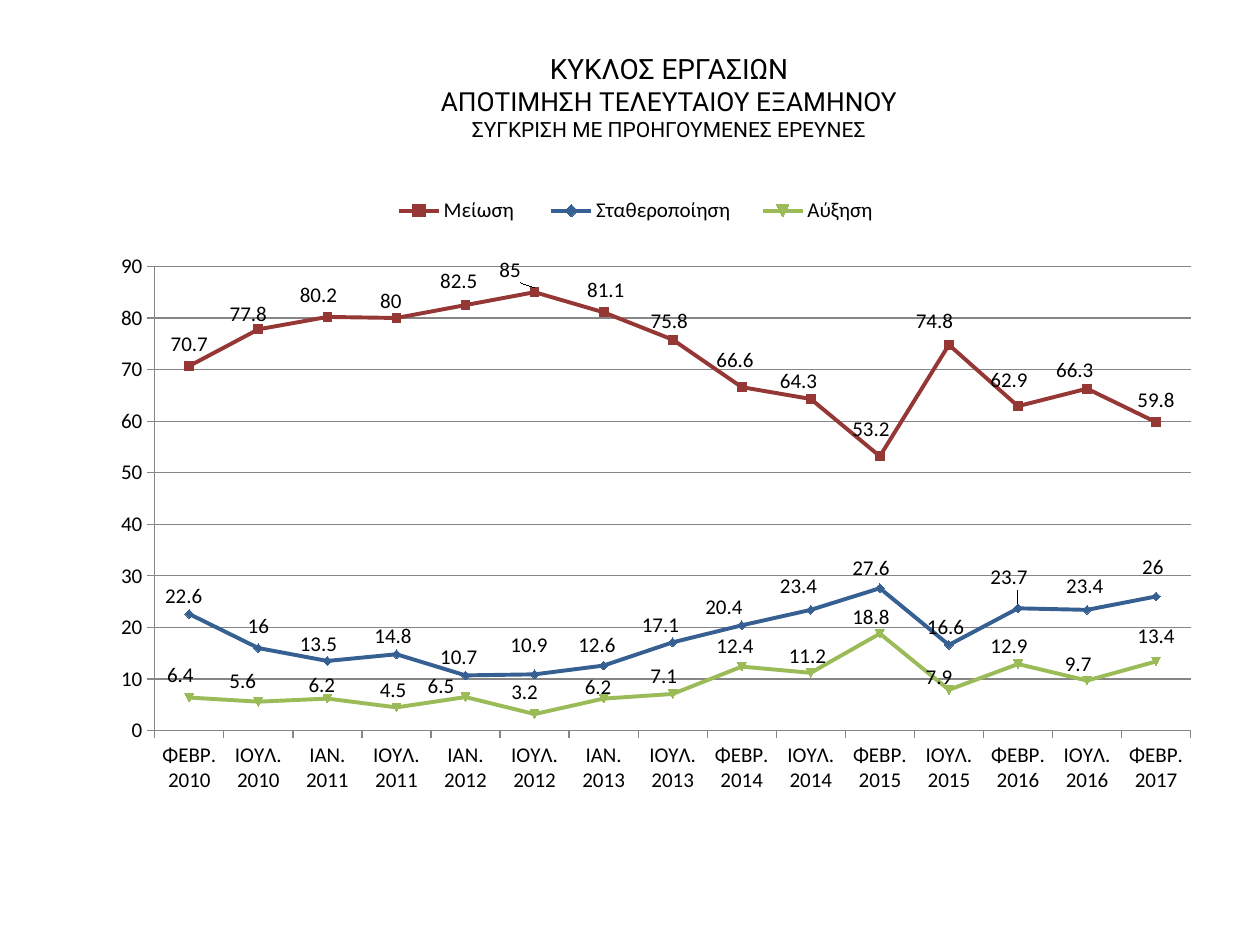
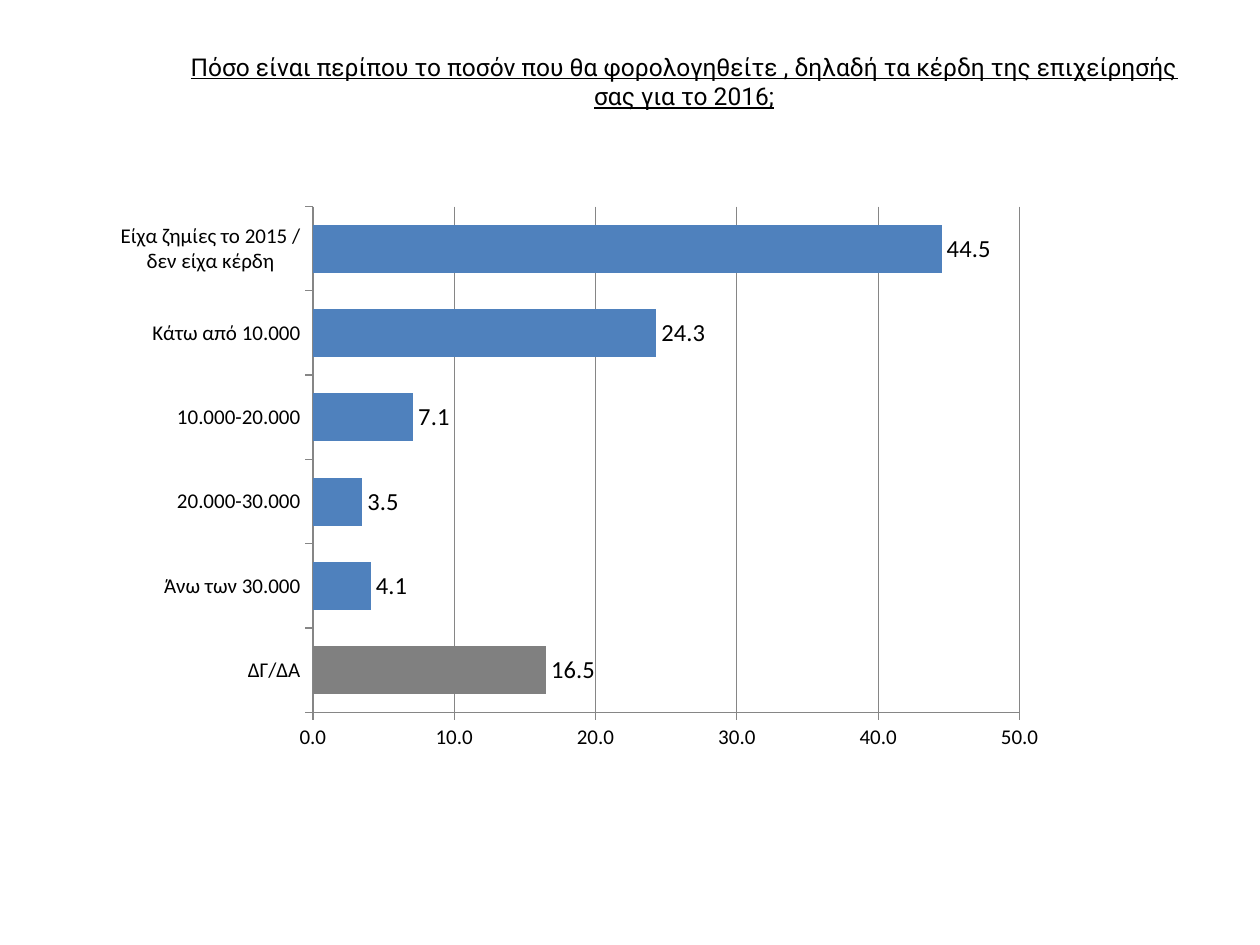
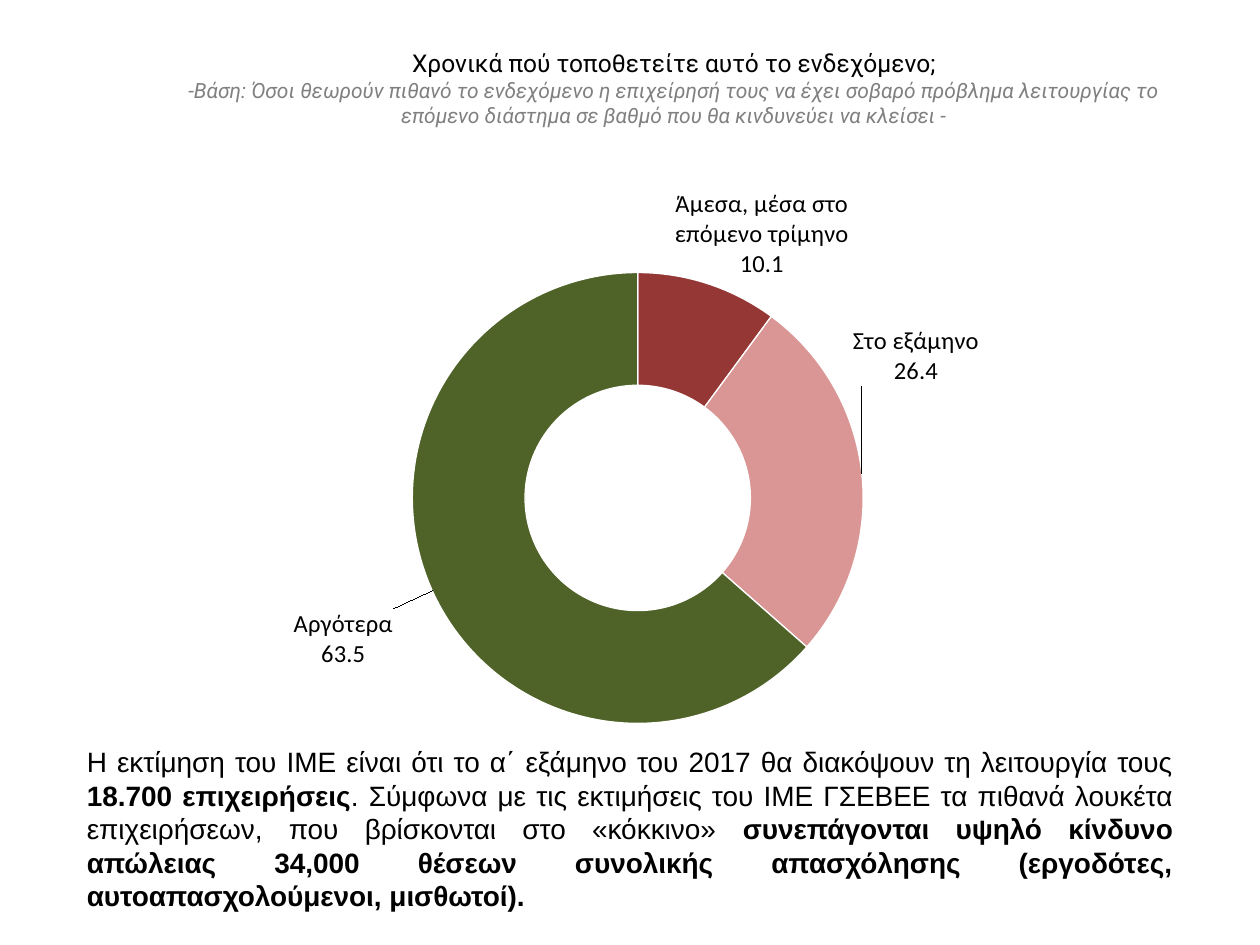
from lxml import etree
from pptx import Presentation
from pptx.chart.data import CategoryChartData
from pptx.dml.color import RGBColor
from pptx.enum.chart import XL_CHART_TYPE, XL_LABEL_POSITION, XL_LEGEND_POSITION, XL_TICK_MARK
from pptx.enum.text import MSO_ANCHOR, MSO_AUTO_SIZE, PP_ALIGN
from pptx.oxml.ns import qn
from pptx.util import Inches, Pt

LINE, BAR, RING = XL_CHART_TYPE.LINE_MARKERS, XL_CHART_TYPE.BAR_CLUSTERED, XL_CHART_TYPE.DOUGHNUT
ABOVE, OUTSIDE = XL_LABEL_POSITION.ABOVE, XL_LABEL_POSITION.OUTSIDE_END
RIGHT, TICK_OUT = XL_LEGEND_POSITION.RIGHT, XL_TICK_MARK.OUTSIDE
CENTER, JUSTIFY = PP_ALIGN.CENTER, PP_ALIGN.JUSTIFY
TOP, NO_FIT, GROW = MSO_ANCHOR.TOP, MSO_AUTO_SIZE.NONE, MSO_AUTO_SIZE.SHAPE_TO_FIT_TEXT

BLACK = RGBColor(0x00, 0x00, 0x00)
WHITE = RGBColor(0xFF, 0xFF, 0xFF)
GRAY = RGBColor(0x80, 0x80, 0x80)
RULE = RGBColor(0x86, 0x86, 0x86)
RED = RGBColor(0x95, 0x37, 0x35)
PINK = RGBColor(0xD9, 0x96, 0x94)
NAVY = RGBColor(0x37, 0x60, 0x92)
BLUE = RGBColor(0x4F, 0x81, 0xBD)
LIME = RGBColor(0x9B, 0xBB, 0x59)
OLIVE = RGBColor(0x4F, 0x62, 0x28)


def style(font, name, size, color=BLACK):
    font.name, font.size, font.color.rgb = name, Pt(size), color


def set_layout(parent, index, **parts):
    """Give a chart part a manual layout, in fractions of the chart."""
    for old in parent.findall(qn("c:layout")):
        parent.remove(old)
    layout = etree.Element(qn("c:layout"))
    manual = etree.SubElement(layout, qn("c:manualLayout"))
    for tag, value in parts.items():
        etree.SubElement(manual, qn("c:" + tag)).set("val", str(value))
    parent.insert(index, layout)


# Titles: box, top margin, lines of (text, size, colour)
TITLES = [
    ((1.25, 0.36, 8.12, 0.54), 0.05, [
        ("ΚΥΚΛΟΣ ΕΡΓΑΣΙΩΝ", 16, BLACK),
        ("ΑΠΟΤΙΜΗΣΗ ΤΕΛΕΥΤΑΙΟΥ ΕΞΑΜΗΝΟΥ", 15, BLACK),
        ("ΣΥΓΚΡΙΣΗ ΜΕ ΠΡΟΗΓΟΥΜΕΝΕΣ ΕΡΕΥΝΕΣ", 12, BLACK)]),
    ((1.25, 0.36, 8.36, 0.51), 0.05, [
        ("Πόσο είναι περίπου το ποσόν που θα φορολογηθείτε , δηλαδή τα κέρδη "
         "της επιχείρησής σας για το 2016;", 14, BLACK)]),
    ((1.25, 0.08, 8.2, 0.76), 0.3, [
        ("Χρονικά πού τοποθετείτε αυτό το ενδεχόμενο;", 14, BLACK),
        ("-Βάση: Όσοι θεωρούν πιθανό το ενδεχόμενο η επιχείρησή τους να έχει σοβαρό "
         "πρόβλημα λειτουργίας το επόμενο διάστημα σε βαθμό που θα κινδυνεύει να "
         "κλείσει -", 12, GRAY)]),
]

# Charts: kind, box, categories, series
MONTHS = ["ΦΕΒΡ. 2010", "ΙΟΥΛ. 2010", "ΙΑΝ. 2011", "ΙΟΥΛ. 2011", "ΙΑΝ. 2012",
          "ΙΟΥΛ. 2012", "ΙΑΝ. 2013", "ΙΟΥΛ. 2013", "ΦΕΒΡ. 2014", "ΙΟΥΛ. 2014",
          "ΦΕΒΡ. 2015", "ΙΟΥΛ. 2015", "ΦΕΒΡ. 2016", "ΙΟΥΛ. 2016", "ΦΕΒΡ. 2017"]
CHARTS = [
    (LINE, (0.75, 1.47, 8.86, 5.04), MONTHS, {
        "Μείωση ": [70.7, 77.8, 80.2, 80, 82.5, 85, 81.1, 75.8, 66.6, 64.3, 53.2,
                    74.8, 62.9, 66.3, 59.8],
        "Σταθεροποίηση": [22.6, 16, 13.5, 14.8, 10.7, 10.9, 12.6, 17.1, 20.4, 23.4,
                          27.6, 16.6, 23.7, 23.4, 26],
        "Αύξηση": [6.4, 5.6, 6.2, 4.5, 6.5, 3.2, 6.2, 7.1, 12.4, 11.2, 18.8, 7.9,
                   12.9, 9.7, 13.4]}),
    (BAR, (0.91, 1.55, 7.48, 4.49),
     ["ΔΓ/ΔΑ", "Άνω των 30.000", "20.000-30.000", "10.000-20.000", "Κάτω από 10.000",
      "Είχα ζημίες το 2015 / δεν είχα κέρδη"],
     {"Series 1": [16.5, 4.1, 3.5, 7.1, 24.3, 44.5]}),
    (RING, (1.69, 1.44, 6.67, 4.44),
     ["Άμεσα, μέσα στο επόμενο τρίμηνο", "Στο εξάμηνο", "Αργότερα"],
     {"Series 1": [10.1, 26.4, 63.5]}),
]

# Label shifts from the default place, in points, one list per series
LINE_SHIFTS = [
    [(0, 0), (-6, 4), (-5, 0), (-3, 3), (-4, -1), (-14, 0), (1, 0), (-2, 2),
     (-4, -3), (-7, 2), (-5, -3), (-8, -1), (-5, -2), (-7, 2), (0, 0)],
    [(-3, 2), (0, 0), (-5, 3), (-2, 2), (-4, 2), (-3, -4), (-4, 1), (-7, 3),
     (-10, 2), (-7, -1), (-5, 1), (-2, 2), (-5, -5), (-1, -1), (-2, -4)],
    [(-5, 0), (-9, 1), (-3, 5), (-2, 3), (-14, 6), (-6, 0), (-3, 6), (-5, 2),
     (-4, 1), (-2, 3), (-5, 3), (-6, 5), (-5, 2), (-5, 3), (0, -2)],
]
RING_SHIFTS = [[(41, -59), (63, -71), (-80, 41)]]

prs = Presentation()
prs.slide_width, prs.slide_height = Inches(10), Inches(7.5)
slides, charts = [], []

# Shared build: title, chart, axes
for (box, margin, lines), (kind, frame, cats, rows) in zip(TITLES, CHARTS):
    slide = prs.slides.add_slide(prs.slide_layouts[5])
    title = slide.shapes.title
    title.left, title.top, title.width, title.height = map(Inches, box)
    text = title.text_frame
    text.text = "\n".join(line[0] for line in lines)
    text.auto_size, text.vertical_anchor = NO_FIT, TOP
    text.margin_top = Inches(margin)
    for para, (_, size, color) in zip(text.paragraphs, lines):
        para.alignment = CENTER
        style(para.runs[0].font, "Roboto", size, color)

    data = CategoryChartData()
    data.categories = cats
    for name, values in rows.items():
        data.add_series(name, values)
    chart = slide.shapes.add_chart(kind, *map(Inches, frame), data).chart
    chart.has_title = chart.has_legend = False
    style(chart.font, "Vollkorn", 18)
    if kind != RING:
        for axis in (chart.category_axis, chart.value_axis):
            axis.major_tick_mark = TICK_OUT
            axis.format.line.color.rgb = RULE
            style(axis.tick_labels.font, "Calibri", 12)
        scale = chart.value_axis
        scale.minimum_scale, scale.major_unit = 0, 10
        scale.has_major_gridlines = True
        scale.major_gridlines.format.line.color.rgb = RULE
    slides.append(slide)
    charts.append(chart)

trend, profit, timing = charts

# Slide 1: lines and legend
trend.value_axis.maximum_scale = 90
set_layout(trend._chartSpace.chart.plotArea, 0, layoutTarget="inner", xMode="edge",
           yMode="edge", x=0.054, y=0.128, w=0.928, h=0.731)
trend.has_legend = True
trend.legend.position = RIGHT
trend.legend.include_in_layout = False
style(trend.legend.font, "Calibri", 12)
set_layout(trend.legend._element, 1, xMode="edge", yMode="edge",
           x=0.25, y=0.01, w=0.47, h=0.06)
for series, color in zip(trend.plots[0].series, (RED, NAVY, LIME)):
    series.smooth = False
    series.format.line.color.rgb = color
    series.format.line.width = Pt(2.25)
    series.marker.size = 5
    series.marker.format.fill.solid()
    series.marker.format.fill.fore_color.rgb = color
    series.marker.format.line.color.rgb = color

# Slide 2: bars
profit.value_axis.maximum_scale = 50
profit.value_axis.tick_labels.number_format = "0.0"
profit.value_axis.tick_labels.number_format_is_linked = False
bars = profit.plots[0]
bars.gap_width, bars.vary_by_categories = 75, False
fill = bars.series[0].format.fill
fill.solid()
fill.fore_color.rgb = BLUE
fill = bars.series[0].points[0].format.fill
fill.solid()
fill.fore_color.rgb = GRAY
labels = bars.series[0].data_labels
labels.show_value, labels.position = True, OUTSIDE
labels.number_format, labels.number_format_is_linked = "0.0", False
style(labels.font, "Calibri", 14)
for run in slides[1].shapes.title.text_frame.paragraphs[0].runs:
    run.font.underline = True

# Slide 3: ring
set_layout(timing._chartSpace.chart.plotArea, 0, layoutTarget="inner", xMode="edge",
           yMode="edge", x=0.237, y=0.163, w=0.537, h=0.806)
for i, color in enumerate((RED, PINK, OLIVE)):
    look = timing.plots[0].series[0].points[i].format
    look.fill.solid()
    look.fill.fore_color.rgb = color
    look.line.color.rgb = WHITE
    look.line.width = Pt(0.75)
slides[2].shapes.title.text_frame.paragraphs[1].runs[0].font.italic = True

# Shifted labels of the lines and the ring
for chart, frame, shifts, size in ((trend, CHARTS[0][1], LINE_SHIFTS, 12),
                                   (timing, CHARTS[2][1], RING_SHIFTS, 14)):
    for series, row in zip(chart.plots[0].series, shifts):
        labels = series.data_labels
        labels.show_value = True
        labels.show_category_name = chart is timing
        style(labels.font, "Calibri", size)
        for i in range(len(row)):
            label = series.points[i].data_label
            style(label.font, "Calibri", size)
            if chart is trend:
                label.position = ABOVE
        for node, (dx, dy) in zip(series._element.xpath("c:dLbls/c:dLbl"), row):
            set_layout(node, 1, x=round(dx / 72 / frame[2], 3),
                       y=round(dy / 72 / frame[3], 3))
            if chart is timing:
                node.find(qn("c:showCatName")).set("val", "1")
                node.find(qn("c:showPercent")).set("val", "0")
                etree.SubElement(node, qn("c:separator")).text = "\n"

# Slide 3: closing text
note = slides[2].shapes.add_textbox(Inches(0.59), Inches(5.86), Inches(8.82), Inches(1.45))
note.text_frame.word_wrap = True
note.text_frame.auto_size = GROW
para = note.text_frame.paragraphs[0]
para.alignment = JUSTIFY
for words, bold in (
        ("Η εκτίμηση του ΙΜΕ είναι ότι το α΄ εξάμηνο του 2017 θα διακόψουν τη "
         "λειτουργία τους ", False),
        ("18.700 επιχειρήσεις", True),
        (". Σύμφωνα με τις εκτιμήσεις του ΙΜΕ ΓΣΕΒΕΕ τα πιθανά λουκέτα επιχειρήσεων, "
         "που βρίσκονται στο «κόκκινο» ", False),
        ("συνεπάγονται υψηλό κίνδυνο απώλειας 34,000 θέσεων συνολικής απασχόλησης "
         "(εργοδότες, αυτοαπασχολούμενοι, μισθωτοί).", True)):
    run = para.add_run()
    run.text = words
    style(run.font, "Arial", 16)
    run.font.bold = bold

prs.save("out.pptx")
